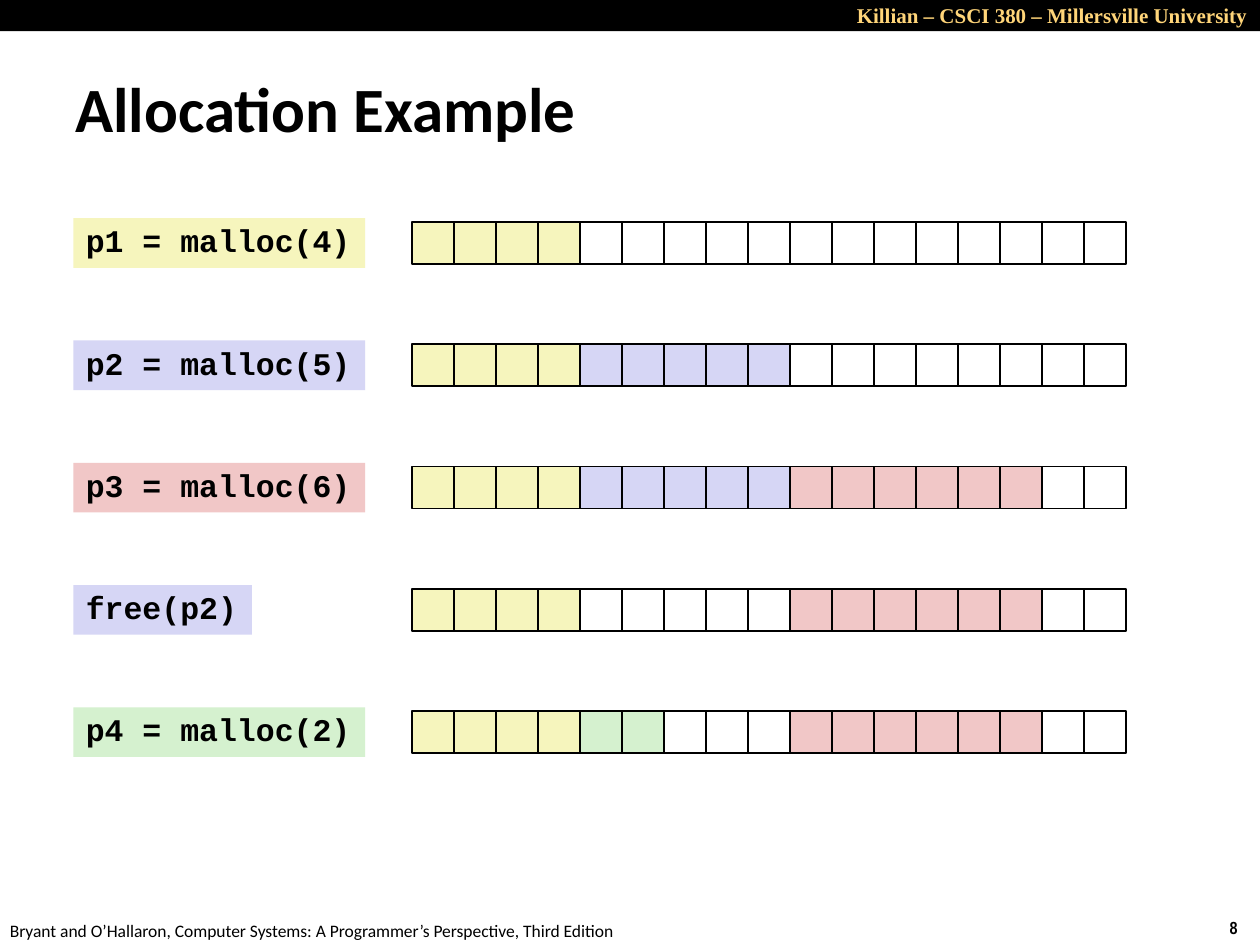
from pptx import Presentation
from pptx.dml.color import RGBColor
from pptx.enum.shapes import MSO_SHAPE
from pptx.enum.text import MSO_ANCHOR, MSO_AUTO_SIZE, PP_ALIGN
from pptx.util import Cm, Pt

RECTANGLE = MSO_SHAPE.RECTANGLE
TOP, MIDDLE = MSO_ANCHOR.TOP, MSO_ANCHOR.MIDDLE
LEFT, RIGHT = PP_ALIGN.LEFT, PP_ALIGN.RIGHT
GROW = MSO_AUTO_SIZE.SHAPE_TO_FIT_TEXT

BLACK, WHITE, GOLD = "000000", "FFFFFF", "FFD579"
YELLOW, BLUE, RED, GREEN = "F6F5BD", "D6D6F5", "F1C7C7", "D5F1CF"

WORDS = 17
STEPS = [
    ("p1 = malloc(4)", YELLOW, [(YELLOW, 4), (WHITE, 13)]),
    ("p2 = malloc(5)", BLUE, [(YELLOW, 4), (BLUE, 5), (WHITE, 8)]),
    ("p3 = malloc(6)", RED, [(YELLOW, 4), (BLUE, 5), (RED, 6), (WHITE, 2)]),
    ("free(p2)", BLUE, [(YELLOW, 4), (WHITE, 5), (RED, 6), (WHITE, 2)]),
    ("p4 = malloc(2)", GREEN,
     [(YELLOW, 4), (GREEN, 2), (WHITE, 3), (RED, 6), (WHITE, 2)]),
]


def color(hex_string):
    """Turn a hex string into a colour."""
    return RGBColor.from_string(hex_string)


def add_rectangle(shapes, box, fill, line=None):
    """Add a flat rectangle, outlined only when a line colour is given."""
    shape = shapes.add_shape(RECTANGLE, *(Cm(length) for length in box))
    shape.shadow.inherit = False
    shape.fill.solid()
    shape.fill.fore_color.rgb = color(fill)
    if line:
        shape.line.color.rgb = color(line)
        shape.line.width = Pt(1)
    else:
        shape.line.fill.background()
    return shape


def write(shape, text, font, size, fill=BLACK, bold=True, align=LEFT,
          anchor=TOP, wrap=False):
    """Put one styled paragraph into a shape and return it."""
    frame = shape.text_frame
    frame.word_wrap = wrap
    frame.vertical_anchor = anchor
    paragraph = frame.paragraphs[0]
    paragraph.text = text
    paragraph.alignment = align
    paragraph.font.name = font
    paragraph.font.size = Pt(size)
    paragraph.font.bold = bold
    paragraph.font.color.rgb = color(fill)
    return paragraph


def add_text(slide, box, text, font, size, **style):
    """Add a text box holding one styled paragraph."""
    shape = slide.shapes.add_textbox(*(Cm(length) for length in box))
    write(shape, text, font, size, **style)


def add_header(slide, left, top, width, height):
    """Add the black band with the course name at its right."""
    add_rectangle(slide.shapes, (left, top, width, height), BLACK)
    text_width = 9.96
    add_text(slide, (left + width - text_width, top - 0.08, text_width, 0.76),
             "Killian – CSCI 380 – Millersville University",
             "Times New Roman", 12, fill=GOLD, align=RIGHT, wrap=True)


def add_footer(slide, left, top, width, height):
    """Add the book credit at the left and the page number at the right."""
    add_text(slide, (left - 0.05, top + 0.06, 12.9, height),
             "Bryant and O’Hallaron, Computer Systems: "
             "A Programmer’s Perspective, Third Edition",
             "Calibri", 10, bold=False)
    add_text(slide, (left + width - 0.86, top, 0.86, height),
             "8", "Arial Narrow", 10)


def add_memory(slide, left, top, width, height, blocks):
    """Add a grouped row of memory words coloured by block."""
    group = slide.shapes.add_group_shape()
    cell_width = width / WORDS
    fills = [fill for fill, count in blocks for _ in range(count)]
    for index, fill in enumerate(fills):
        box = (left + index * cell_width, top, cell_width, height)
        add_rectangle(group.shapes, box, fill, BLACK)


def add_step(slide, left, top, width, height, step):
    """Add one call and the state of the memory after it."""
    call, fill, blocks = step
    memory_left, memory_height = 6.83, 0.85
    add_memory(slide, left + memory_left, top + (height - memory_height) / 2,
               width - memory_left, memory_height, blocks)
    label_width = 0.56 + 0.38 * len(call)
    label = add_rectangle(slide.shapes, (left, top, label_width, height), fill)
    write(label, call, "Courier New", 18).line_spacing = 0.94
    label.text_frame.auto_size = GROW


def add_steps(slide, left, top, width, height):
    """Spread the allocation steps evenly down the box."""
    step_height = 1.0
    pitch = (height - step_height) / (len(STEPS) - 1)
    for index, step in enumerate(STEPS):
        add_step(slide, left, top + index * pitch, width, step_height, step)


def main():
    """Build and save the slide."""
    presentation = Presentation()
    presentation.slide_width = Cm(25.4)
    presentation.slide_height = Cm(19.05)
    slide = presentation.slides.add_slide(presentation.slide_layouts[6])
    add_header(slide, 0, 0, 25.4, 0.63)
    add_footer(slide, 0, 18.36, 25.4, 0.69)
    add_text(slide, (1.27, 1.37, 17.96, 1.6), "Allocation Example",
             "Calibri", 36, anchor=MIDDLE, wrap=True)
    add_steps(slide, 1.48, 4.4, 21.22, 10.86)
    presentation.save("out.pptx")


if __name__ == "__main__":
    main()
